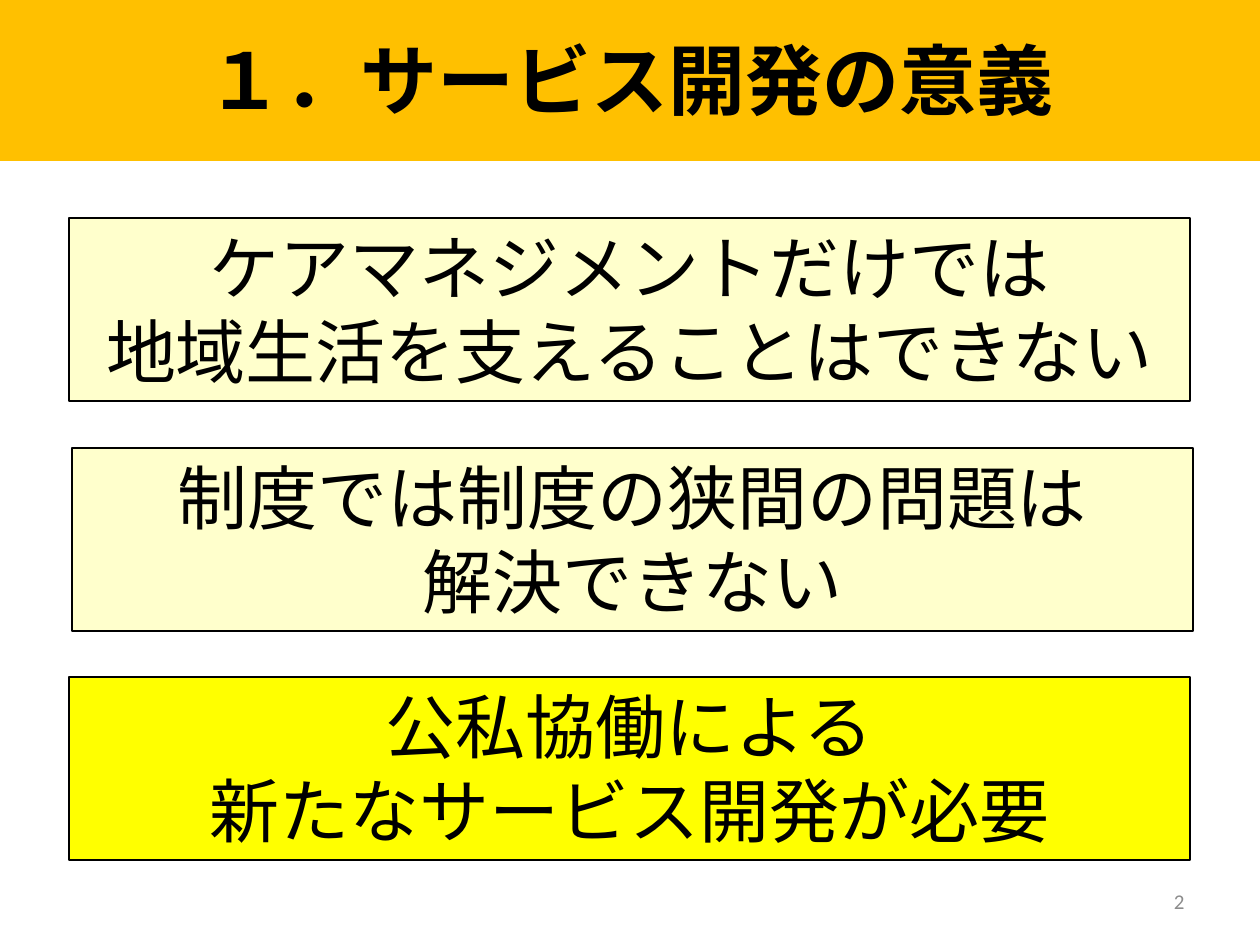
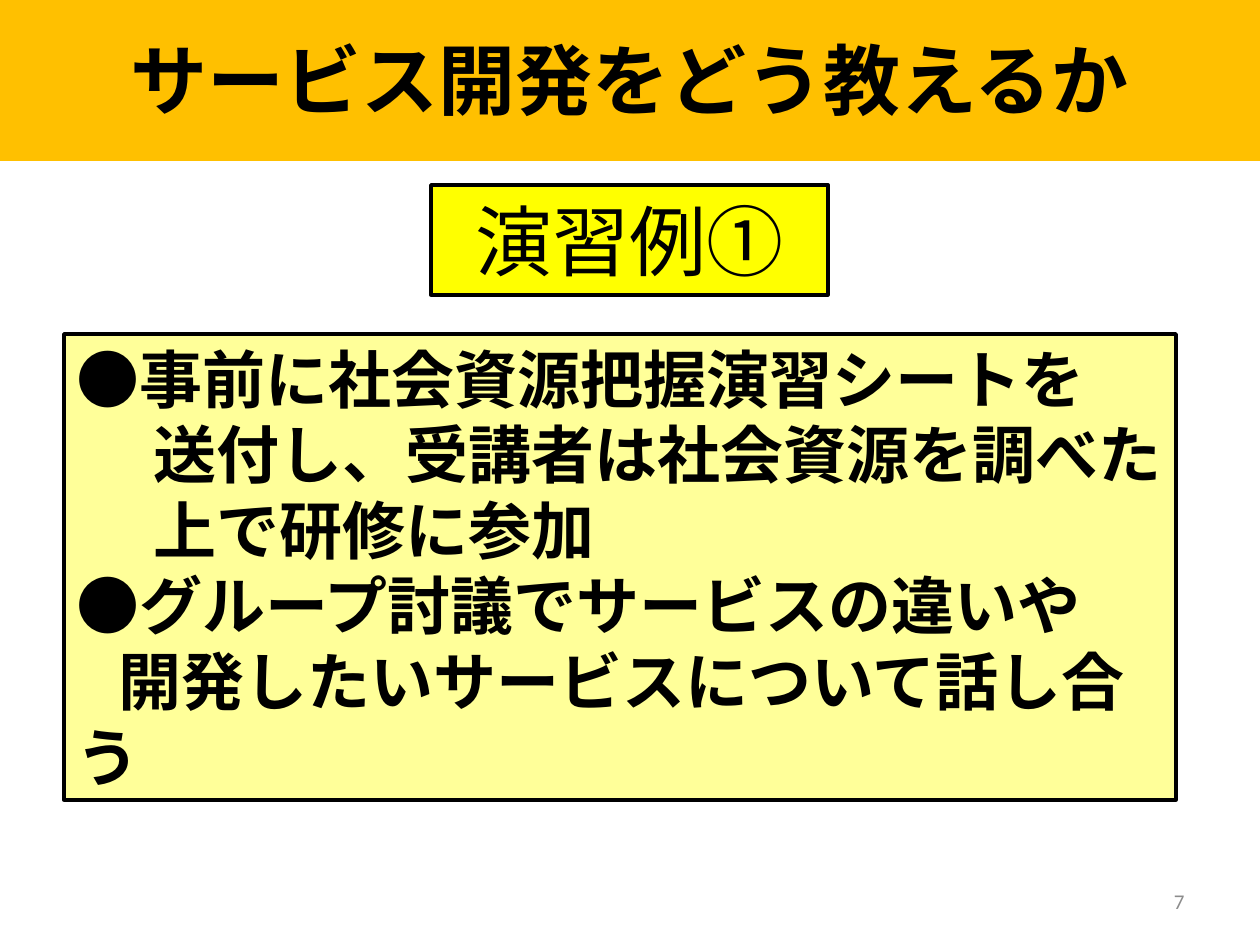
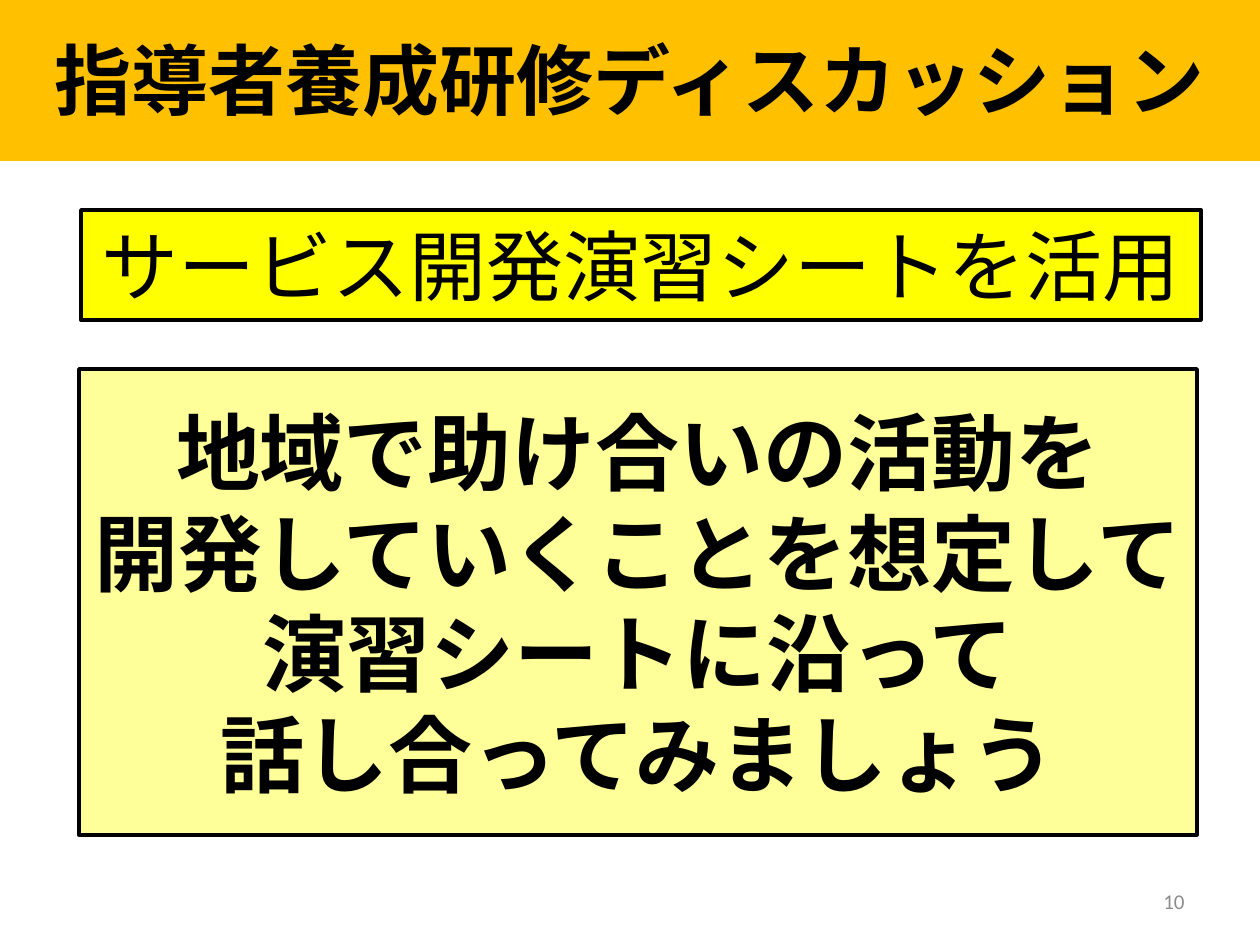
from pptx import Presentation
from pptx.dml.color import RGBColor
from pptx.enum.lang import MSO_LANGUAGE_ID as LANG
from pptx.enum.shapes import MSO_SHAPE as SHAPE
from pptx.enum.text import MSO_ANCHOR as ANCHOR, MSO_AUTO_SIZE as FIT, PP_ALIGN as ALIGN
from pptx.util import Emu, Pt

# Shared look
BLACK = RGBColor(0x00, 0x00, 0x00)
GREY = RGBColor(0x8C, 0x8C, 0x8C)
ORANGE = RGBColor(0xFF, 0xC0, 0x00)
YELLOW = RGBColor(0xFF, 0xFF, 0x00)
CREAM = RGBColor(0xFF, 0xFF, 0xCC)
PALE_YELLOW = RGBColor(0xFF, 0xFF, 0x99)
HEAD_FONT, BODY_FONT = "Calibri", "Arial"
TITLE_ONLY = 5
SLIDE_W, SLIDE_H = 1260, 945
PX_PER_INCH = 126


def px(n):
    return Emu(round(n * 914400 / PX_PER_INCH))


def place(sp, left, top, width, height):
    sp.left, sp.top, sp.width, sp.height = map(px, (left, top, width, height))


def add_text(p, text, size, font=HEAD_FONT, color=BLACK, bold=False, align=ALIGN.CENTER):
    """Write one paragraph, with a line break at each newline."""
    p.alignment = align
    for i, line in enumerate(text.split("\n")):
        if i:
            p.add_line_break()
        r = p.add_run()
        r.text = line
        f = r.font
        f.name, f.size, f.bold = font, Pt(size), bold
        f.color.rgb = color
        f.language_id = LANG.JAPANESE


def indent(p, left, first):
    pPr = p._p.get_or_add_pPr()
    pPr.set("marL", str(px(left)))
    pPr.set("indent", str(px(first)))


def add_slide(prs, title, number):
    """Slide with the orange title band and the page number."""
    s = prs.slides.add_slide(prs.slide_layouts[TITLE_ONLY])
    band = s.shapes.title
    place(band, 0, -4, SLIDE_W, 165)
    band.fill.solid()
    band.fill.fore_color.rgb = ORANGE
    tf = band.text_frame
    tf.auto_size, tf.vertical_anchor = FIT.NONE, ANCHOR.MIDDLE
    add_text(tf.paragraphs[0], title, 44, bold=True)

    page = s.shapes.add_textbox(px(903), px(876), px(294), px(50))
    tf = page.text_frame
    tf.word_wrap, tf.vertical_anchor = True, ANCHOR.MIDDLE
    add_text(tf.paragraphs[0], number, 12, color=GREY, align=ALIGN.RIGHT)
    return s


def add_box(s, left, top, width, height, fill, line=2, anchor=ANCHOR.MIDDLE):
    """Outlined box; returns its text frame."""
    sp = s.shapes.add_shape(SHAPE.RECTANGLE, *map(px, (left, top, width, height)))
    sp.shadow.inherit = False
    sp.fill.solid()
    sp.fill.fore_color.rgb = fill
    sp.line.color.rgb = BLACK
    sp.line.width = Pt(line)
    tf = sp.text_frame
    tf.word_wrap, tf.vertical_anchor = True, anchor
    return tf


def add_statement(s, left, top, fill, text):
    tf = add_box(s, left, top, 1121, 183, fill, line=0.75, anchor=ANCHOR.TOP)
    tf.auto_size = FIT.SHAPE_TO_FIT_TEXT
    add_text(tf.paragraphs[0], text, 40)


def add_heading(s, left, top, width, text):
    tf = add_box(s, left, top, width, 110, YELLOW)
    add_text(tf.paragraphs[0], text, 44)


def build_significance(prs):
    s = add_slide(prs, "１．サービス開発の意義", "2")
    add_statement(s, 69, 218, CREAM, "ケアマネジメントだけでは\n地域生活を支えることはできない")
    add_statement(s, 72, 448, CREAM, "制度では制度の狭間の問題は\n解決できない")
    add_statement(s, 69, 677, YELLOW, "公私協働による\n新たなサービス開発が必要")


def build_teaching(prs):
    s = add_slide(prs, "サービス開発をどう教えるか", "7")
    add_heading(s, 431, 185, 397, "演習例①")
    tf = add_box(s, 64, 334, 1112, 466, PALE_YELLOW)
    # Text, left margin, first-line indent
    steps = [
        ("●事前に社会資源把握演習シートを\n送付し、受講者は社会資源を調べた\n上で研修に参加", 77, -77),
        ("●グループ討議でサービスの違いや", 0, 0),
        ("開発したいサービスについて話し合う", 0, 42),
    ]
    for i, (text, left, first) in enumerate(steps):
        p = tf.add_paragraph() if i else tf.paragraphs[0]
        indent(p, left, first)
        add_text(p, text, 36, BODY_FONT, bold=True, align=ALIGN.LEFT)


def build_discussion(prs):
    s = add_slide(prs, "指導者養成研修ディスカッション", "10")
    add_heading(s, 81, 210, 1120, "サービス開発演習シートを活用")
    tf = add_box(s, 79, 369, 1118, 466, PALE_YELLOW)
    add_text(tf.paragraphs[0],
             "地域で助け合いの活動を\n開発していくことを想定して\n"
             "演習シートに沿って\n話し合ってみましょう",
             48, BODY_FONT, bold=True)


def main():
    prs = Presentation()
    prs.slide_width, prs.slide_height = px(SLIDE_W), px(SLIDE_H)
    build_significance(prs)
    build_teaching(prs)
    build_discussion(prs)
    prs.save("out.pptx")


if __name__ == "__main__":
    main()
